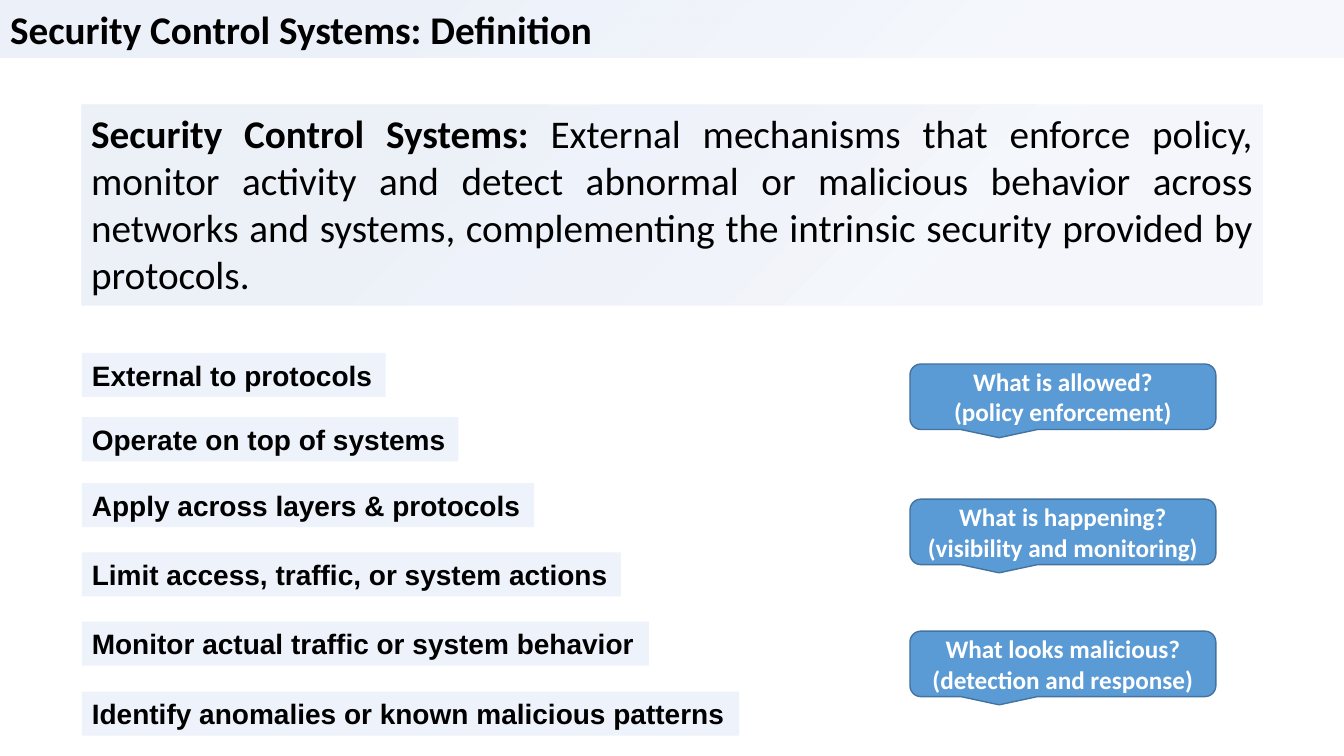
from lxml.etree import SubElement
from pptx import Presentation
from pptx.dml.color import RGBColor
from pptx.enum.shapes import MSO_SHAPE
from pptx.enum.text import MSO_ANCHOR, MSO_AUTO_SIZE, PP_ALIGN
from pptx.oxml.ns import qn
from pptx.util import Pt

COLORS = {
    "text": "000000",
    "tint": "4472C4",
    "statement": "EEF2FA",
    "callout": "5B9BD5",
    "callout_line": "43739E",
    "callout_text": "FFFFFF",
}
TITLE = "Security Control Systems: Definition"
TERM = "Security Control Systems: "
DEFINITION = (
    "External mechanisms that enforce policy, monitor activity and detect "
    "abnormal or malicious behavior across networks and systems, complementing "
    "the intrinsic security provided by protocols."
)
# Text, top offset and width of each box
STATEMENTS = [
    ("External to protocols", 0, 217),
    ("Operate on top of systems", 46, 269),
    ("Apply across layers & protocols", 93, 323),
    ("Limit access, traffic, or system actions", 142.5, 385),
    ("Monitor actual traffic or system behavior", 192, 405),
    ("Identify anomalies or known malicious patterns", 242, 469.5),
]
# Question, control function and top offset of each callout
QUESTIONS = [
    ("What is allowed?", "(policy enforcement)", 0),
    ("What is happening?", "(visibility and monitoring)", 96.5),
    ("What looks malicious?", "(detection and response)", 190.8),
]


def rgb(name):
    return RGBColor.from_string(COLORS[name])


def place(shape, left, top, width, height):
    shape.left, shape.top = Pt(left), Pt(top)
    shape.width, shape.height = Pt(width), Pt(height)


def add_run(paragraph, text, font, size, color="text", bold=True):
    run = paragraph.add_run()
    run.text = text
    run.font.name = font
    run.font.size = Pt(size)
    run.font.bold = bold
    run.font.color.rgb = rgb(color)


def tint_from_corner(shape):
    """Fill with a translucent circular gradient centred on the top left corner."""
    shape.fill.gradient()
    for stop, position, opacity in zip(shape.fill.gradient_stops, (0.26, 0.76), (10, 5)):
        stop.position = position
        stop.color.rgb = rgb("tint")
    gradient = shape.element.spPr.find(qn("a:gradFill"))
    for color, opacity in zip(gradient.iter(qn("a:srgbClr")), (10, 5)):
        SubElement(color, qn("a:alpha"), val=str(opacity * 1000))
    linear = gradient.find(qn("a:lin"))
    if linear is not None:
        gradient.remove(linear)
    circle = SubElement(gradient, qn("a:path"), path="circle")
    SubElement(circle, qn("a:fillToRect"), r="100000", b="100000")


def add_title(slide, left, top, width, height):
    title = slide.shapes.title
    place(title, left, top, width, height)
    tint_from_corner(title)
    frame = title.text_frame
    frame.auto_size = MSO_AUTO_SIZE.NONE
    frame.vertical_anchor = MSO_ANCHOR.TOP
    paragraph = frame.paragraphs[0]
    paragraph.alignment = PP_ALIGN.LEFT
    add_run(paragraph, TITLE, "Calibri", 28)


def add_definition(slide, left, top, width, height):
    box = slide.shapes.add_textbox(Pt(left), Pt(top), Pt(width), Pt(height))
    tint_from_corner(box)
    box.text_frame.word_wrap = True
    paragraph = box.text_frame.paragraphs[0]
    paragraph.alignment = PP_ALIGN.JUSTIFY
    add_run(paragraph, TERM, "Calibri", 28)
    add_run(paragraph, DEFINITION, "Calibri", 28, bold=False)


def add_statements(slide, left, top, height):
    for text, offset, width in STATEMENTS:
        box = slide.shapes.add_textbox(Pt(left), Pt(top + offset), Pt(width), Pt(height))
        box.fill.solid()
        box.fill.fore_color.rgb = rgb("statement")
        frame = box.text_frame
        frame.word_wrap = False
        frame.vertical_anchor = MSO_ANCHOR.MIDDLE
        add_run(frame.paragraphs[0], text, "Arial", 20)


def add_questions(slide, left, top, width, height):
    for question, function, offset in QUESTIONS:
        callout = slide.shapes.add_shape(
            MSO_SHAPE.ROUNDED_RECTANGULAR_CALLOUT,
            Pt(left), Pt(top + offset), Pt(width), Pt(height),
        )
        callout.shadow.inherit = False
        callout.fill.solid()
        callout.fill.fore_color.rgb = rgb("callout")
        callout.line.color.rgb = rgb("callout_line")
        callout.line.width = Pt(1)
        frame = callout.text_frame
        frame.word_wrap = True
        frame.vertical_anchor = MSO_ANCHOR.MIDDLE
        paragraph = frame.paragraphs[0]
        paragraph.alignment = PP_ALIGN.CENTER
        add_run(paragraph, question, "Calibri", 18, "callout_text")
        paragraph.add_line_break()
        add_run(paragraph, function, "Calibri", 18, "callout_text")


def main():
    presentation = Presentation()
    presentation.slide_width, presentation.slide_height = Pt(960), Pt(540)
    slide = presentation.slides.add_slide(presentation.slide_layouts[5])
    add_title(slide, 0, 0, 960, 41.2)
    add_definition(slide, 58, 74.7, 844, 143.5)
    add_statements(slide, 58.5, 252, 31.5)
    add_questions(slide, 650, 260, 218.5, 46.8)
    presentation.save("out.pptx")


if __name__ == "__main__":
    main()
